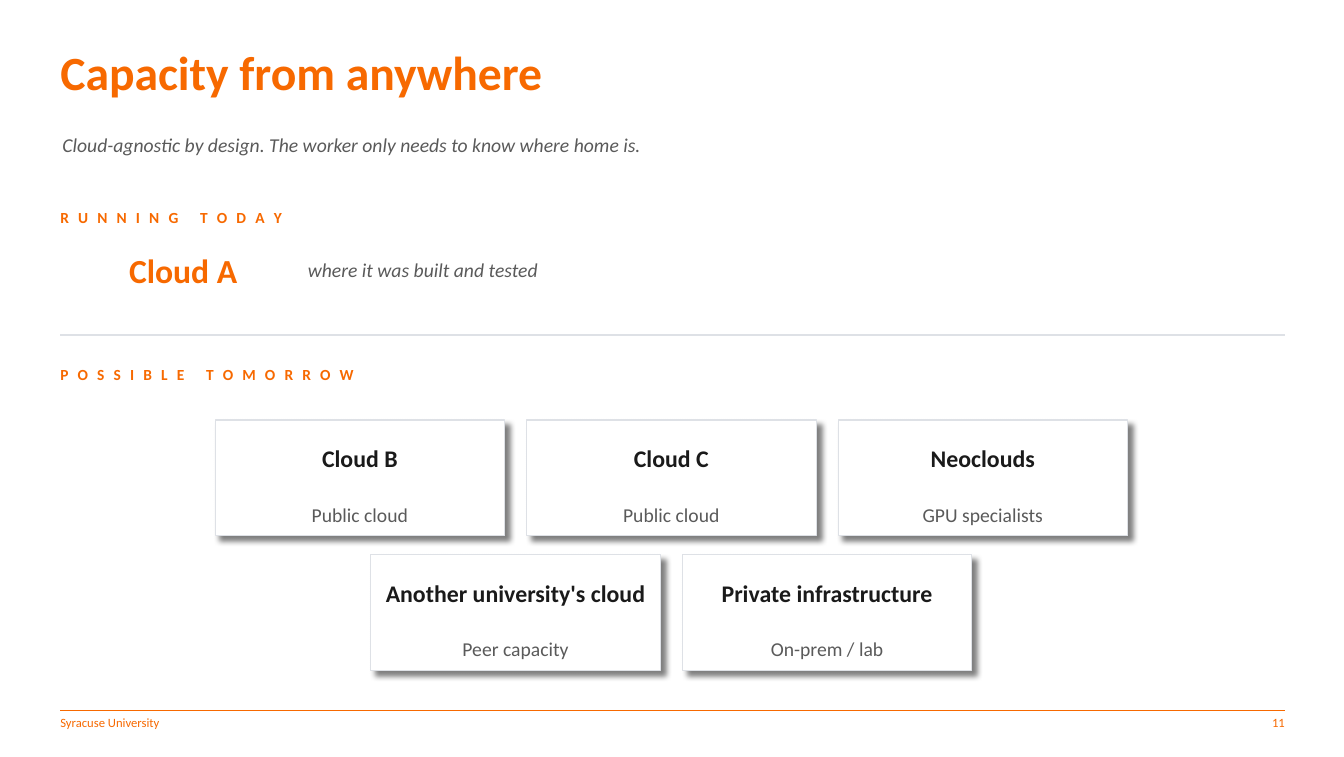
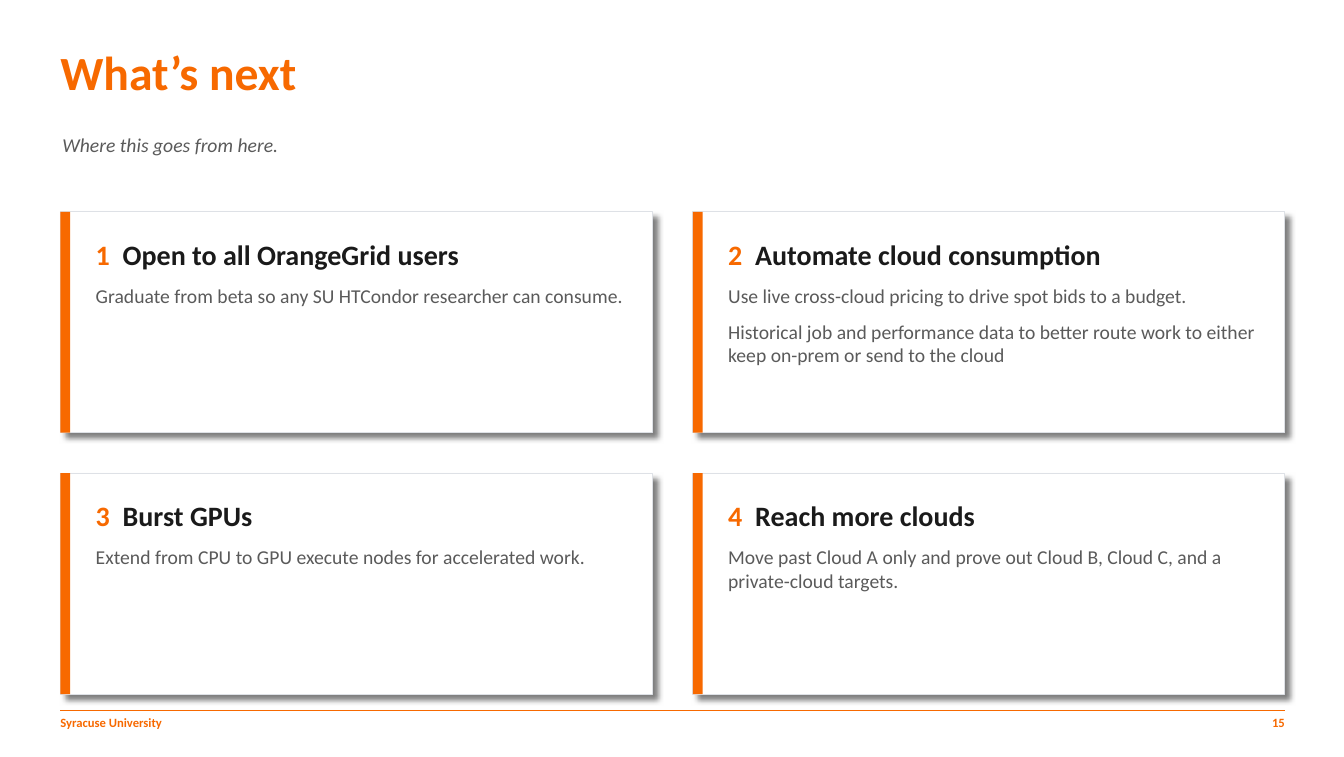
"""Build two slides on where cloud capacity comes from and what follows."""
import dataclasses

import lxml.etree
import pptx
import pptx.dml.color
import pptx.enum.shapes
import pptx.enum.text
import pptx.oxml.ns
import pptx.util

Cm = pptx.util.Cm
Pt = pptx.util.Pt
qn = pptx.oxml.ns.qn
ALIGN = pptx.enum.text.PP_ALIGN
ANCHOR = pptx.enum.text.MSO_ANCHOR


@dataclasses.dataclass(frozen=True)
class Theme:
    font: str = "Calibri"
    orange: str = "F76900"
    ink: str = "1A1A1A"
    gray: str = "5A5A5A"
    border: str = "DEE1E6"
    paper: str = "FFFFFF"
    title: int = 34
    lead: int = 24
    step: int = 20
    option: int = 17
    body: int = 14
    label: int = 11
    footer: int = 9


T = Theme()
LEFT, WIDTH = 1.52, 30.82
RIGHT = LEFT + WIDTH
CENTER = 16.9
OPTION_ROWS = [
    [("Cloud B", "Public cloud"), ("Cloud C", "Public cloud"), ("Neoclouds", "GPU specialists")],
    [("Another university's cloud", "Peer capacity"), ("Private infrastructure", "On-prem / lab")],
]
STEPS = [
    ("Open to all OrangeGrid users",
     ["Graduate from beta so any SU HTCondor researcher can consume."]),
    ("Automate cloud consumption",
     ["Use live cross-cloud pricing to drive spot bids to a budget.",
      "Historical job and performance data to better route work to either keep on-prem or send to the cloud"]),
    ("Burst GPUs",
     ["Extend from CPU to GPU execute nodes for accelerated work."]),
    ("Reach more clouds",
     ["Move past Cloud A only and prove out Cloud B, Cloud C, and a private-cloud targets."]),
]


def rgb(color):
    return pptx.dml.color.RGBColor.from_string(color)


def style(r, size, color, bold=False, italic=False):
    r.font.name, r.font.size = T.font, Pt(size)
    r.font.color.rgb = rgb(color)
    r.font.bold, r.font.italic = bold, italic


def prepare_frame(sp, anchor=ANCHOR.TOP):
    tf = sp.text_frame
    tf.word_wrap = True
    tf.auto_size = pptx.enum.text.MSO_AUTO_SIZE.SHAPE_TO_FIT_TEXT
    tf.vertical_anchor = anchor
    tf.margin_left = tf.margin_top = tf.margin_right = tf.margin_bottom = 0
    return tf


def add_frame(s, x, y, w, h, anchor=ANCHOR.TOP):
    return prepare_frame(s.shapes.add_textbox(Cm(x), Cm(y), Cm(w), Cm(h)), anchor)


def add_text(s, text, x, y, w, h, size, color, bold=False, italic=False,
             align=ALIGN.LEFT, anchor=ANCHOR.TOP):
    p = add_frame(s, x, y, w, h, anchor).paragraphs[0]
    p.text, p.alignment = text, align
    style(p.runs[0], size, color, bold, italic)
    return p


def add_label(s, text, y):
    """Add a letterspaced section label, with a thin space between letters."""
    p = add_text(s, " ".join(text), LEFT, y, 15.24, 0.38, T.label, T.orange,
                 bold=True, anchor=ANCHOR.MIDDLE)
    p.runs[0].font._element.set("spc", "200")


def add_rule(s, y, color):
    sp = s.shapes.add_connector(pptx.enum.shapes.MSO_CONNECTOR.STRAIGHT,
                                Cm(LEFT), Cm(y), Cm(RIGHT), Cm(y))
    sp.line.color.rgb, sp.line.width = rgb(color), Pt(1)
    lxml.etree.SubElement(sp._element.spPr, qn("a:effectLst"))


def add_rect(s, x, y, w, h, fill):
    sp = s.shapes.add_shape(pptx.enum.shapes.MSO_SHAPE.RECTANGLE, Cm(x), Cm(y), Cm(w), Cm(h))
    sp.fill.solid()
    sp.fill.fore_color.rgb = rgb(fill)
    sp.line.fill.background()
    sp.shadow.inherit = False
    return sp


def add_card(s, x, y, w, h):
    """Add a bordered white panel with a soft shadow to the lower right."""
    sp = add_rect(s, x, y, w, h, T.paper)
    sp.line.color.rgb, sp.line.width = rgb(T.border), Pt(0.75)
    effects = sp._element.spPr.find(qn("a:effectLst"))
    shadow = lxml.etree.SubElement(
        effects, qn("a:outerShdw"), blurRad=str(Pt(4)), dist=str(Pt(5)),
        dir="2700000", algn="tl", rotWithShape="0")
    color = lxml.etree.SubElement(shadow, qn("a:srgbClr"), val="000000")
    lxml.etree.SubElement(color, qn("a:alpha"), val="50000")


def add_option(s, name, kind, x, y, w, h):
    add_card(s, x, y, w, h)
    p = add_text(s, name, x + 0.25, y + 0.66, w - 0.5, 0.61, T.option, T.ink,
                 bold=True, align=ALIGN.CENTER)
    p.line_spacing = 0.95
    add_text(s, kind, x + 0.25, y + 2.08, w - 0.5, 0.53, T.body, T.gray, align=ALIGN.CENTER)


def add_step(s, number, heading, details, x, y, w, h):
    add_card(s, x, y, w, h)
    add_rect(s, x, y, 0.25, h, T.orange)
    tf = add_frame(s, x + 0.89, y + 0.64, w - 1.4, 1.7)
    p = tf.paragraphs[0]
    tabs = lxml.etree.SubElement(p._p.get_or_add_pPr(), qn("a:tabLst"))
    lxml.etree.SubElement(tabs, qn("a:tab"), pos=str(Cm(0.68)), algn="l")
    for text, color in ((f"{number}\t", T.orange), (heading, T.ink)):
        r = p.add_run()
        r.text = text
        style(r, T.step, color, bold=True)
    for detail in details:
        p = tf.add_paragraph()
        p.text, p.space_before = detail, Pt(9)
        style(p.runs[0], T.body, T.gray)


def add_slide(prs, title, subtitle, page, bold_footer=False):
    """Add a slide with its title, subtitle and footer."""
    s = prs.slides.add_slide(prs.slide_layouts[5])
    sp = s.shapes.title
    sp.left, sp.top, sp.width, sp.height = Cm(LEFT), Cm(1.07), Cm(30.73), Cm(1.24)
    p = prepare_frame(sp).paragraphs[0]
    p.text, p.alignment = title, ALIGN.LEFT
    style(p.runs[0], T.title, T.orange, bold=True)
    add_text(s, subtitle, 1.57, 3.35, 30.48, 0.53, T.body, T.gray, italic=True)
    add_rule(s, 17.88, T.orange)
    add_text(s, "Syracuse University", LEFT, 17.98, 15.24, 0.36, T.footer, T.orange, bold_footer)
    add_text(s, str(page), RIGHT - 2.54, 17.98, 2.54, 0.36, T.footer, T.orange,
             bold_footer, align=ALIGN.RIGHT)
    return s


def build_capacity(prs):
    s = add_slide(prs, "Capacity from anywhere",
                  "Cloud-agnostic by design. The worker only needs to know where home is.", 11)
    add_label(s, "RUNNING TODAY", 5.28)
    add_text(s, "Cloud A", 3.25, 6.38, 4.32, 0.84, T.lead, T.orange, bold=True, anchor=ANCHOR.MIDDLE)
    add_text(s, "where it was built and tested", 7.75, 6.53, 20.32, 0.53, T.body, T.gray,
             italic=True, anchor=ANCHOR.MIDDLE)
    add_rule(s, 8.43, T.border)
    add_label(s, "POSSIBLE TOMORROW", 9.22)
    w, h, gap_x, gap_y = 7.29, 2.92, 0.55, 0.46
    for row, options in enumerate(OPTION_ROWS):
        left = CENTER - (len(options) * (w + gap_x) - gap_x) / 2
        for col, (name, kind) in enumerate(options):
            add_option(s, name, kind, left + col * (w + gap_x), 10.57 + row * (h + gap_y), w, h)


def build_next(prs):
    s = add_slide(prs, "What’s next", "Where this goes from here.", 15, bold_footer=True)
    gap, h = 1.02, 5.56
    w = (WIDTH - gap) / 2
    for i, (heading, details) in enumerate(STEPS):
        row, col = divmod(i, 2)
        add_step(s, i + 1, heading, details, LEFT + col * (w + gap), 5.33 + row * (h + gap), w, h)


def main():
    prs = pptx.Presentation()
    prs.slide_width, prs.slide_height = Cm(33.83), Cm(19.05)
    build_capacity(prs)
    build_next(prs)
    prs.save("out.pptx")


if __name__ == "__main__":
    main()
